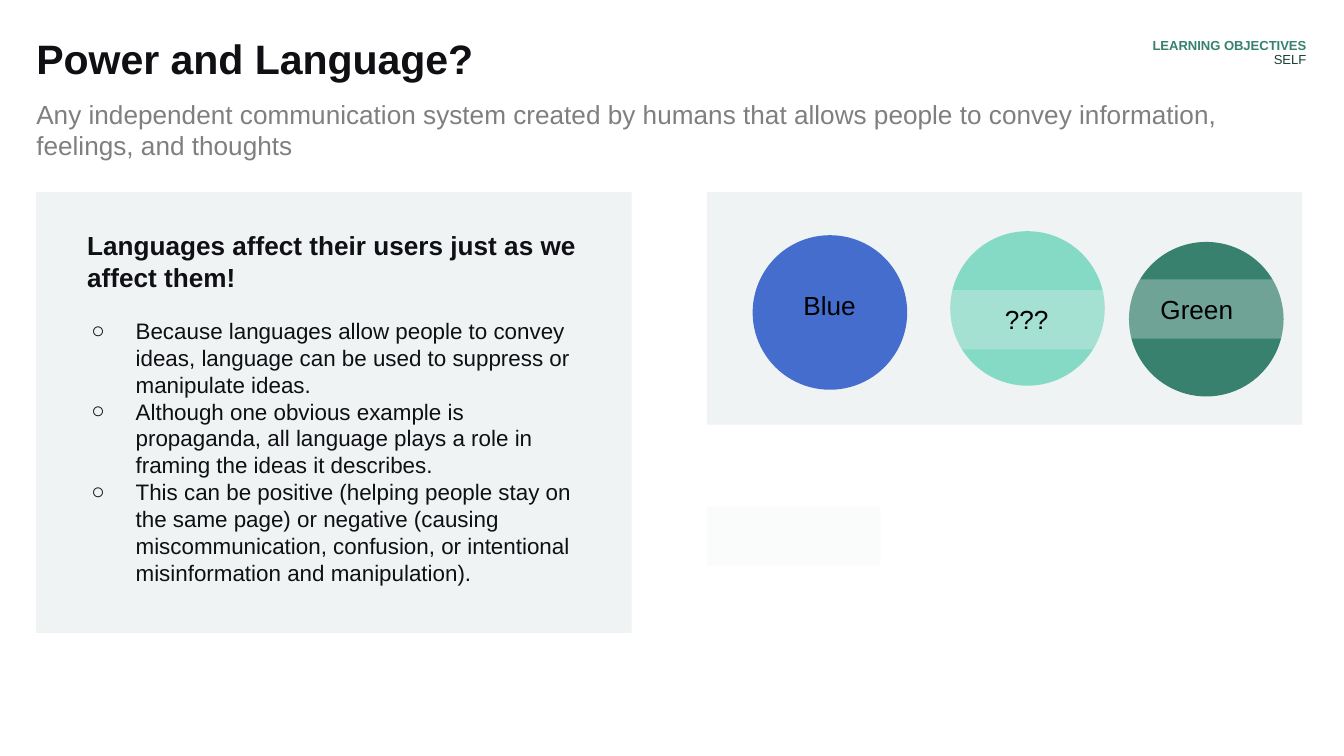
from lxml.etree import SubElement
from pptx import Presentation
from pptx.dml.color import RGBColor
from pptx.enum.shapes import MSO_SHAPE
from pptx.enum.text import MSO_ANCHOR, MSO_AUTO_SIZE, PP_ALIGN
from pptx.oxml.ns import qn
from pptx.util import Inches, Pt

HUES = {
    "ink": "0F0F14", "panel": "F0F3F3", "grey": "7F7F7F", "black": "000000",
    "green": "37816E", "dark": "1B4036", "blue": "446DCD", "mint": "85DAC5",
}
POINTS = [
    "Because languages allow people to convey ideas, language can be used to suppress or manipulate ideas.",
    "Although one obvious example is propaganda, all language plays a role in framing the ideas it describes.",
    "This can be positive (helping people stay on the same page) or negative (causing miscommunication, "
    "confusion, or intentional misinformation and manipulation).",
]


def hue(name):
    return RGBColor.from_string(HUES[name])


def set_frame(shape, pads):
    frame = shape.text_frame
    frame.word_wrap = True
    frame.auto_size = MSO_AUTO_SIZE.NONE
    frame.vertical_anchor = MSO_ANCHOR.TOP
    (frame.margin_left, frame.margin_top,
     frame.margin_right, frame.margin_bottom) = map(Inches, pads)
    return frame


def add_run(para, text, size, color, bold=False):
    run = para.add_run()
    run.text = text
    run.font.name = "Arial"
    run.font.size = Pt(size)
    run.font.bold = bold
    run.font.color.rgb = hue(color)


def add_text(slide, box, pads):
    return set_frame(slide.shapes.add_textbox(*map(Inches, box)), pads)


def add_form(slide, kind, box, color, alpha=None):
    shape = slide.shapes.add_shape(kind, *map(Inches, box))
    shape.shadow.inherit = False
    shape.line.fill.background()
    shape.fill.solid()
    shape.fill.fore_color.rgb = hue(color)
    if alpha:
        tint = shape.fill._xPr.find(qn("a:solidFill"))[0]
        SubElement(tint, qn("a:alpha"), val=str(alpha * 1000))
    return shape


def add_bullet(para):
    props = para._p.get_or_add_pPr()
    props.set("marL", str(Inches(0.5)))
    props.set("indent", str(Inches(-0.33)))
    tint = SubElement(props, qn("a:buClr"))
    SubElement(tint, qn("a:srgbClr"), val=HUES["ink"])
    SubElement(props, qn("a:buFont"), typeface="Arial")
    SubElement(props, qn("a:buChar"), char="○")


def add_header(slide, left, top, width):
    title = slide.shapes.title
    title.left, title.top, title.width, title.height = map(
        Inches, (left, top, 7.99, 0.59))
    para = set_frame(title, (0, 0, 0.1, 0.1)).paragraphs[0]
    para.alignment = PP_ALIGN.LEFT
    para.line_spacing = 0.9
    add_run(para, "Power and Language?", 22, "ink", True)

    tag = add_text(slide, (left + width - 3.04, top, 3.07, 0.36), (0, 0, 0, 0.1))
    para = tag.paragraphs[0]
    para.alignment = PP_ALIGN.RIGHT
    para.line_spacing = 0.9
    add_run(para, "LEARNING OBJECTIVES", 7, "green", True)
    para.add_line_break()
    add_run(para, "SELF", 7, "dark")

    lead = add_text(slide, (left, top + 0.44, width, 0.47), (0, 0, 0.1, 0.1))
    add_run(lead.paragraphs[0],
            "Any independent communication system created by humans that allows "
            "people to convey information, feelings, and thoughts", 14, "grey")


def add_ideas(slide, left, top, width, height):
    add_form(slide, MSO_SHAPE.RECTANGLE, (left, top, width, height), "panel")
    head = add_text(slide, (left + 0.28, top + 0.18, 3.96, 0.67), (0.1,) * 4)
    add_run(head.paragraphs[0],
            "Languages affect their users just as we affect them!", 14, "ink", True)
    body = add_text(slide, (left + 0.24, top + 0.83, 3.96, 2.46), (0, 0.1, 0.1, 0.1))
    for i, text in enumerate(POINTS):
        para = body.add_paragraph() if i else body.paragraphs[0]
        add_bullet(para)
        add_run(para, text, 12, "ink")


def add_colors(slide, left, top, width, height):
    add_form(slide, MSO_SHAPE.RECTANGLE, (left, top, width, height), "panel")
    for x, y, color in ((0.34, 0.32, "blue"), (3.14, 0.37, "green"),
                        (1.81, 0.29, "mint")):
        add_form(slide, MSO_SHAPE.OVAL, (left + x, top + y, 1.15, 1.15), color)
    for x, y, wide, text in ((0, 2.34, 1.29, ""), (3, 0.65, 1.29, "Green"),
                             (1.76, 0.73, 1.24, "???")):
        band = add_form(slide, MSO_SHAPE.RECTANGLE,
                        (left + x, top + y, wide, 0.44), "panel", 30)
        if text:
            para = set_frame(band, (0.1,) * 4).paragraphs[0]
            para.alignment = PP_ALIGN.CENTER
            add_run(para, text, 14, "black")
    label = add_text(slide, (left + 0.62, top + 0.62, 0.67, 0.44), (0.1,) * 4)
    add_run(label.paragraphs[0], "Blue", 14, "black")


def main():
    deck = Presentation()
    deck.slide_width, deck.slide_height = Inches(10), Inches(10 * 9 / 16)
    slide = deck.slides.add_slide(deck.slide_layouts[5])
    add_header(slide, 0.27, 0.29, 9.42)
    add_ideas(slide, 0.27, 1.43, 4.43, 3.28)
    add_colors(slide, 5.26, 1.43, 4.43, 1.73)
    deck.save("out.pptx")


if __name__ == "__main__":
    main()
